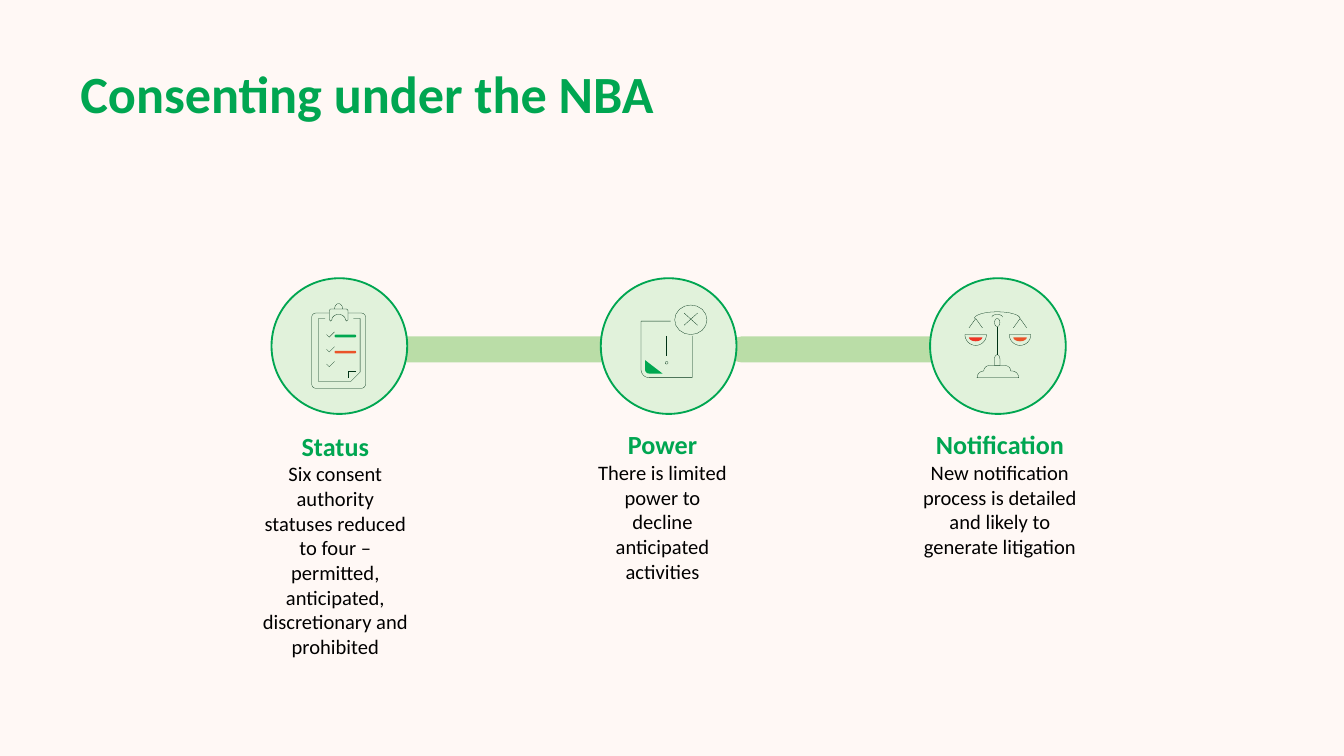
import math

import lxml.etree
import pptx
import pptx.dml.color
import pptx.enum.shapes
import pptx.enum.text
import pptx.oxml.ns
import pptx.util
from pptx.util import Inches

THEME = {
    "font": "Calibri",
    "background": "FFF8F5",
    "green": "00A651",
    "bar": "6ABF4B",
    "disc": "E1F2DB",
    "body": "000000",
    "ink": "003215",
    "leaf": "00A750",
    "orange": "EA5329",
    "red": "EE3425",
    "title_size": 28,
    "heading_size": 14,
    "body_size": 11,
    "bar_width": 14,
    "disc_width": 1,
    "ink_width": 0.13,
}


def arc(cx, cy, rx, ry, start, end, steps=16):
    """Return points along an elliptical arc, with angles in clockwise degrees."""
    angles = [math.radians(start + (end - start) * i / steps) for i in range(steps + 1)]
    return [(cx + rx * math.cos(a), cy + ry * math.sin(a)) for a in angles]


def rounded(left, top, right, bottom, radius):
    """Return the closed outline of a rounded rectangle."""
    centres = [
        (right - radius, bottom - radius),
        (left + radius, bottom - radius),
        (left + radius, top + radius),
        (right - radius, top + radius),
    ]
    points = []
    for i, (x, y) in enumerate(centres):
        points += arc(x, y, radius, radius, 90 * i, 90 * i + 90, 4)
    return points + points[:1]


class SlideBuilder:
    """Hold the theme and the current slide, and add styled elements to it."""

    def __init__(self, slide, theme):
        """Keep the slide and theme, and paint the background."""
        self.slide, self.theme = slide, theme
        fill = slide.background.fill
        fill.solid()
        fill.fore_color.rgb = self.color("background")

    def color(self, name):
        """Return a theme colour."""
        return pptx.dml.color.RGBColor.from_string(self.theme[name])

    def paint(self, sp, fill=None, line=None):
        """Set the fill and outline of a shape."""
        sp.shadow.inherit = False
        if fill:
            sp.fill.solid()
            sp.fill.fore_color.rgb = self.color(fill)
        else:
            sp.fill.background()
        if line:
            color, width = line
            sp.line.color.rgb = self.color(color)
            sp.line.width = pptx.util.Pt(self.theme[width])
        else:
            sp.line.fill.background()

    def text(self, box, paragraphs, frame_format, align):
        """Add a text box of (text, size, colour, bold) paragraphs."""
        tf = self.slide.shapes.add_textbox(*map(Inches, box)).text_frame
        for name, value in {"word_wrap": True, **frame_format}.items():
            setattr(tf, name, value)
        for i, (text, size, color, bold) in enumerate(paragraphs):
            p = tf.add_paragraph() if i else tf.paragraphs[0]
            p.alignment = align
            r = p.add_run()
            r.text = text
            font_format = {
                "name": self.theme["font"],
                "size": pptx.util.Pt(self.theme[size]),
                "bold": bold,
            }
            for name, value in font_format.items():
                setattr(r.font, name, value)
            r.font.color.rgb = self.color(color)

    def bar(self, x1, x2, y):
        """Add a thick translucent horizontal line with round ends."""
        qn = pptx.oxml.ns.qn
        straight = pptx.enum.shapes.MSO_CONNECTOR.STRAIGHT
        sp = self.slide.shapes.add_connector(straight, *map(Inches, (x1, y, x2, y)))
        sp.line.color.rgb = self.color("bar")
        sp.line.width = pptx.util.Pt(self.theme["bar_width"])
        props = sp._element.spPr
        props.find(qn("a:ln")).set("cap", "rnd")
        lxml.etree.SubElement(next(props.iter(qn("a:srgbClr"))), qn("a:alpha"), val="45000")
        lxml.etree.SubElement(props, qn("a:effectLst"))

    def disc(self, left, top, size):
        """Add an outlined circle."""
        oval = pptx.enum.shapes.MSO_SHAPE.OVAL
        sp = self.slide.shapes.add_shape(oval, *map(Inches, (left, top, size, size)))
        self.paint(sp, "disc", ("green", "disc_width"))

    def outline(self, contours, fill=None):
        """Add contours as one freeform, filled or drawn as thin strokes."""
        paths = [[(Inches(x), Inches(y)) for x, y in contour] for contour in contours]
        builder = self.slide.shapes.build_freeform(*paths[0][0])
        for i, points in enumerate(paths):
            if i:
                builder.move_to(*points[0])
            builder.add_line_segments(points[1:], close=points[0] == points[-1])
        sp = builder.convert_to_shape()
        self.paint(sp, fill, None if fill else ("ink", "ink_width"))

    def scales(self):
        """Add the balance scales icon."""
        pans = [(7.26, "red"), (7.59, "orange")]
        base = [(7.27, 2.81), *arc(7.32, 2.81, 0.05, 0.05, 180, 270, 4),
                *arc(7.36, 2.76, 0.04, 0.04, 180, 270, 4),
                *arc(7.48, 2.76, 0.04, 0.04, 270, 360, 4),
                *arc(7.53, 2.81, 0.05, 0.05, 270, 360, 4), (7.27, 2.81)]
        collar = [(7.4, 2.72), *arc(7.42, 2.67, 0.02, 0.03, 180, 360), (7.44, 2.72), (7.4, 2.72)]
        strokes = [
            base, collar, [(7.42, 2.64), (7.42, 2.43)],
            arc(7.42, 2.4, 0.02, 0.03, 0, 360),
            arc(7.42, 2.36, 0.04, 0.02, 180, 360),
            arc(7.42, 2.37, 0.17, 0.05, 180, 360),
        ]
        for x, color in pans:
            self.outline([arc(x, 2.51, 0.05, 0.03, 0, 180)], color)
            pan = arc(x, 2.49, 0.08, 0.08, 0, 180)
            strokes += [pan + pan[:1], [(x - 0.05, 2.44), (x, 2.37), (x + 0.05, 2.44)]]
        self.outline(strokes)

    def refusal(self):
        """Add the declined notice icon."""
        self.outline([
            [(5.15, 2.5), (5.15, 2.81), *arc(4.83, 2.75, 0.06, 0.06, 90, 180),
             (4.77, 2.39), (4.99, 2.39)],
            [(4.96, 2.5), (4.96, 2.65)],
            arc(4.96, 2.7, 0.01, 0.01, 0, 360),
            arc(5.14, 2.38, 0.12, 0.11, 0, 360),
            [(5.09, 2.33), (5.19, 2.42)],
            [(5.19, 2.33), (5.09, 2.42)],
        ])
        corner = [(4.8, 2.68), (4.93, 2.78), *arc(4.83, 2.75, 0.03, 0.03, 90, 180, 4), (4.8, 2.68)]
        self.outline([corner], "leaf")

    def clipboard(self):
        """Add the checklist icon."""
        for y, color in ((2.49, "leaf"), (2.61, "orange")):
            self.outline([rounded(2.49, y, 2.65, y + 0.02, 0.01)], color)
        clip = [(2.46, 2.3), (2.58, 2.3), (2.59, 2.31), (2.59, 2.38), (2.58, 2.39),
                *arc(2.52, 2.38, 0.05, 0.04, 360, 180), (2.46, 2.39), (2.45, 2.38),
                (2.45, 2.31), (2.46, 2.3)]
        board = [(2.45, 2.33), *arc(2.35, 2.36, 0.03, 0.03, 270, 180, 4),
                 *arc(2.35, 2.86, 0.03, 0.03, 180, 90, 4),
                 *arc(2.69, 2.86, 0.03, 0.03, 90, 0, 4),
                 *arc(2.69, 2.36, 0.03, 0.03, 0, -90, 4), (2.59, 2.33)]
        page = [(2.42, 2.37), (2.37, 2.37), (2.37, 2.84), (2.61, 2.84),
                (2.68, 2.77), (2.68, 2.37), (2.63, 2.37)]
        ticks = [[(2.43, y), (2.45, y + 0.02), (2.49, y - 0.02)] for y in (2.49, 2.6, 2.71)]
        fold = [(2.65, 2.76), (2.59, 2.76), (2.59, 2.81)]
        self.outline([arc(2.52, 2.3, 0.03, 0.04, 180, 360), clip, board, page, *ticks, fold])


def main():
    """Build and save the slide."""
    prs = pptx.Presentation()
    prs.slide_width, prs.slide_height = Inches(10), Inches(10 * 9 / 16)
    s = SlideBuilder(prs.slides.add_slide(prs.slide_layouts[6]), THEME)
    align = pptx.enum.text.PP_ALIGN
    s.text((0.5, 0.39, 9, 0.59), [("Consenting under the NBA", "title_size", "green", True)],
           {"vertical_anchor": pptx.enum.text.MSO_ANCHOR.MIDDLE}, align.LEFT)
    for x1, x2 in ((2.12, 4.88), (5.52, 7.65)):
        s.bar(x1, x2, 2.6)
    stages = [
        ((1.94, 3.2, 1.11, 1.72), "Status", "Six consent authority statuses reduced to four – "
         "permitted, anticipated, discretionary and prohibited", s.clipboard),
        ((4.43, 3.19, 1, 1.16), "Power",
         "There is limited power to decline anticipated activities", s.refusal),
        ((6.82, 3.19, 1.24, 0.98), "Notification",
         "New notification process is detailed and likely to generate litigation", s.scales),
    ]
    label_format = dict.fromkeys(("margin_left", "margin_top", "margin_right", "margin_bottom"), 0)
    label_format["auto_size"] = pptx.enum.text.MSO_AUTO_SIZE.SHAPE_TO_FIT_TEXT
    for i, (box, heading, body, icon) in enumerate(stages):
        s.disc(2.02 + 2.45 * i, 2.07, 1.01)
        s.text(box, [(heading, "heading_size", "green", True), (body, "body_size", "body", False)],
               label_format, align.CENTER)
        icon()
    prs.save("out.pptx")


if __name__ == "__main__":
    main()
